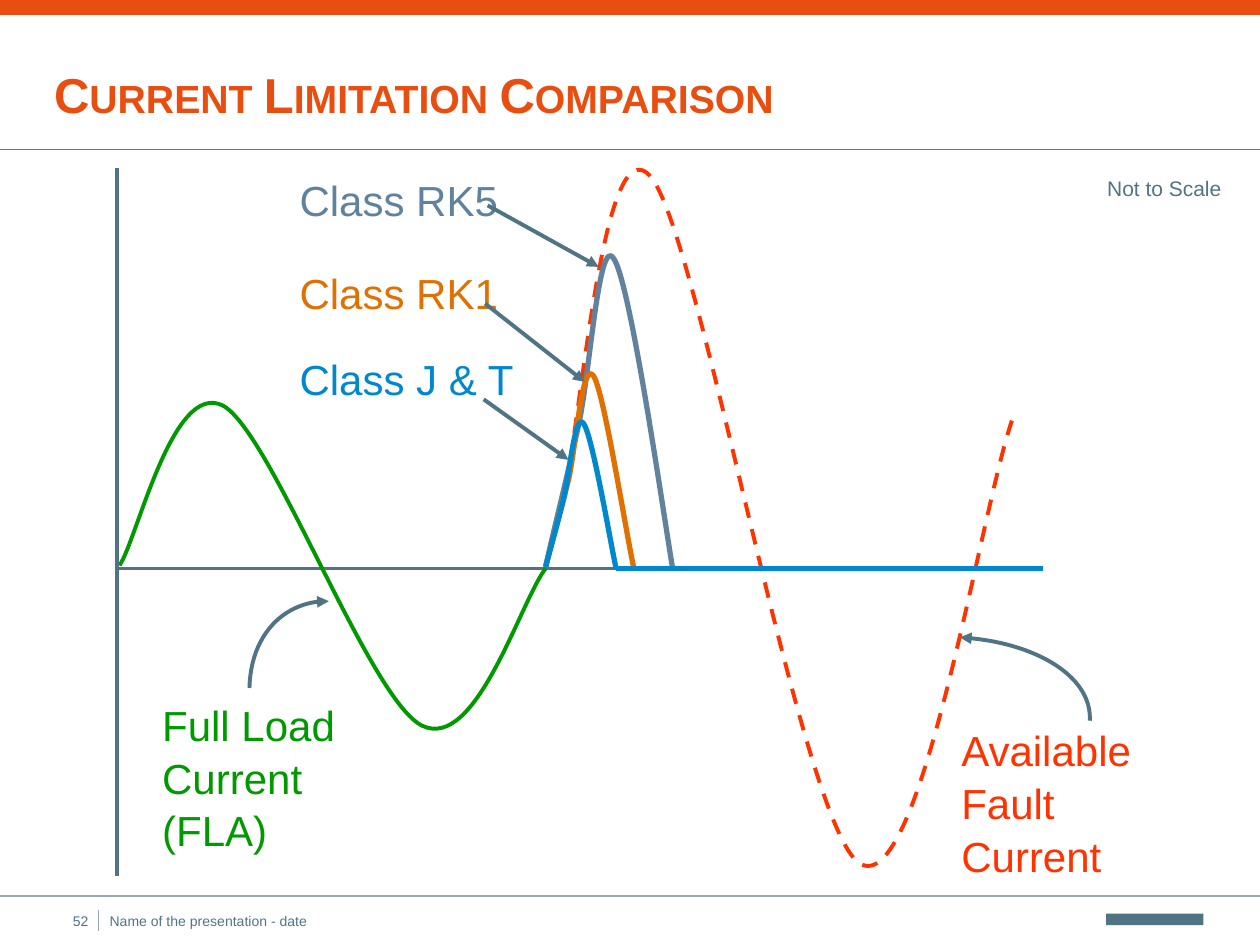
"""Build a slide comparing the current limitation of fuse classes."""
from dataclasses import dataclass
from typing import Optional

import lxml.etree
import pptx
import pptx.dml.color
import pptx.dml.line
import pptx.enum.dml
import pptx.enum.shapes
import pptx.enum.text
import pptx.oxml.ns
import pptx.shapes.connector
import pptx.shapes.freeform
import pptx.text.text
import pptx.util

Cm = pptx.util.Cm
Pt = pptx.util.Pt
qn = pptx.oxml.ns.qn
Point = tuple[float, float]

ORANGE, SLATE, PALE = "E84E0F", "517485", "96A9B1"
GREEN, RED = "009900", "FF3300"
STEEL, AMBER, BLUE = "61829C", "E17000", "0088CE"
AXIS_Y = 11.46


@dataclass(frozen=True)
class Stroke:
    color: str
    width: float = 2.25
    dashed: bool = False
    arrow: Optional[str] = None


@dataclass(frozen=True)
class Curve:
    points: tuple[Point, ...]
    stroke: Stroke


@dataclass(frozen=True)
class FuseClass:
    points: tuple[Point, ...]
    color: str
    axis_end: float


@dataclass(frozen=True)
class Label:
    text: str
    left: float
    top: float
    width: float
    height: float
    color: str
    size: float = 24


POINTER = Stroke(SLATE, arrow="tailEnd")
RULE = Stroke(PALE, 0.75)

FULL_LOAD = Curve(
    ((2.41, 11.4), (2.77, 10.87), (3.48, 7.65), (4.5, 8.18), (5.49, 8.74),
     (7.44, 14.1), (8.51, 14.63), (9.6, 15.16), (10.49, 12.12), (11, AXIS_Y)),
    Stroke(GREEN))
FAULT = Curve(
    ((11, 11.43), (11.05, 11.2), (11, 11.33), (11.35, 10.03), (11.71, 8.71),
     (12.14, 2.34), (13.13, 3.58), (14.12, 4.8), (16.13, 16.59), (17.32, 17.4),
     (18.54, 18.21), (19.76, 10.34), (20.4, 8.48)),
    Stroke(RED, dashed=True))
FULL_LOAD_POINTER = Curve(
    ((6.63, 12.12), (5.74, 12.09), (5.05, 12.88), (5.03, 13.87)),
    Stroke(SLATE, arrow="headEnd"))
FAULT_POINTER = Curve(
    ((21.97, 14.53), (22.02, 13.67), (20.85, 12.93), (19.35, 12.85)), POINTER)

FUSE_CLASSES = (
    FuseClass(((11, 11.43), (11.1, 10.95), (11.43, 9.63), (11.66, 8.59),
               (11.89, 7.57), (12.07, 4.72), (12.37, 5.21), (12.7, 5.66),
               (13.34, 10.13), (13.56, AXIS_Y)), STEEL, 20.98),
    FuseClass(((11, 11.43), (11.07, 11.15), (11.3, 10.31), (11.46, 9.68),
               (11.61, 9.04), (11.73, 7.26), (11.96, 7.57), (12.17, 7.85),
               (12.6, 10.64), (12.78, AXIS_Y)), AMBER, 21.01),
    FuseClass(((11, 11.43), (11.05, 11.23), (11.23, 10.59), (11.35, 10.11),
               (11.48, 9.63), (11.58, 8.31), (11.76, 8.53), (11.94, 8.76),
               (12.29, 10.85), (12.42, AXIS_Y)), BLUE, 21.03),
)

LABELS = (
    Label("Full Load Current (FLA)", 3.02, 13.92, 4.9, 1.78, GREEN),
    Label("Available Fault Current", 19.13, 14.43, 5.26, 1.78, RED),
    Label("Class J & T", 5.79, 6.96, 4.9, 1.02, BLUE),
    Label("Not to Scale", 22.07, 3.38, 2.84, 0.76, SLATE, 12),
    Label("Class RK1", 5.79, 5.21, 4.9, 1.02, AMBER),
    Label("Class RK5", 5.79, 3.35, 4.9, 1.02, STEEL),
)

CLASS_POINTERS = (
    ((9.75, 8.05), (11.46, 9.27)),
    ((9.78, 6.12), (11.79, 7.7)),
    ((9.83, 4.14), (12.07, 5.38)),
)


def rgb(color: str) -> pptx.dml.color.RGBColor:
    return pptx.dml.color.RGBColor.from_string(color)


def apply_stroke(line: pptx.dml.line.LineFormat, stroke: Stroke) -> None:
    line.color.rgb = rgb(stroke.color)
    line.width = Pt(stroke.width)
    if stroke.dashed:
        line.dash_style = pptx.enum.dml.MSO_LINE.DASH
    if stroke.arrow:
        ln = line._get_or_add_ln()
        lxml.etree.SubElement(ln, qn(f"a:{stroke.arrow}"), type="triangle")


def draw_line(shapes, start: Point, end: Point,
              stroke: Stroke) -> pptx.shapes.connector.Connector:
    line = shapes.add_connector(pptx.enum.shapes.MSO_CONNECTOR.STRAIGHT,
                                *map(Cm, start + end))
    apply_stroke(line.line, stroke)
    lxml.etree.SubElement(line._element.spPr, qn("a:effectLst"))
    return line


def draw_curve(shapes, curve: Curve) -> None:
    """Draw a start point followed by triples of cubic Bézier points."""
    start, *rest = [(Cm(x), Cm(y)) for x, y in curve.points]
    builder = shapes.build_freeform(*start)
    builder.add_line_segments(rest, close=False)
    outline = builder.convert_to_shape()
    path = outline._element.find(".//" + qn("a:path"))
    segments = path.findall(qn("a:lnTo"))
    for first in range(0, len(segments), 3):
        bezier = lxml.etree.SubElement(path, qn("a:cubicBezTo"))
        for segment in segments[first:first + 3]:
            bezier.append(segment[0])
            path.remove(segment)
    outline.fill.background()
    outline.shadow.inherit = False
    apply_stroke(outline.line, curve.stroke)


def draw_fuse_class(shapes, fuse: FuseClass) -> None:
    trace = shapes.add_group_shape().shapes
    stroke = Stroke(fuse.color, 3)
    draw_curve(trace, Curve(fuse.points, stroke))
    draw_line(trace, fuse.points[-1], (fuse.axis_end, AXIS_Y), stroke)


def draw_label(shapes, label: Label) -> pptx.text.text.TextFrame:
    frame = shapes.add_textbox(*map(Cm, (label.left, label.top, label.width,
                                         label.height))).text_frame
    frame.word_wrap = True
    paragraph = frame.paragraphs[0]
    paragraph.text = label.text
    paragraph.font.name = "Arial"
    paragraph.font.size = Pt(label.size)
    paragraph.font.color.rgb = rgb(label.color)
    return frame


def draw_block(shapes, left: float, top: float, width: float, height: float,
               color: str) -> None:
    block = shapes.add_shape(pptx.enum.shapes.MSO_SHAPE.RECTANGLE,
                             *map(Cm, (left, top, width, height)))
    block.shadow.inherit = False
    block.fill.solid()
    block.fill.fore_color.rgb = rgb(color)
    block.line.fill.background()


def draw_frame(shapes) -> None:
    footer = draw_label(shapes, Label("Name of the presentation - date",
                                      2.21, 18.39, 4.04, 0.33, SLATE, 8))
    number = draw_label(shapes, Label("52", 1.27, 18.39, 0.71, 0.33, SLATE, 8))
    for frame in (footer, number):
        frame.margin_left = frame.margin_right = 0
        frame.margin_top = frame.margin_bottom = 0
    footer.word_wrap = False
    number.paragraphs[0].alignment = pptx.enum.text.PP_ALIGN.CENTER
    draw_line(shapes, (1.98, 18.34), (1.98, 18.77), RULE)
    draw_line(shapes, (0, 18.06), (25.4, 18.06), RULE)
    draw_block(shapes, 22.3, 18.42, 1.96, 0.23, SLATE)
    draw_line(shapes, (0, 3.02), (25.4, 3.02), Stroke(ORANGE, 0.75))
    draw_block(shapes, 0, 0, 25.4, 0.3, ORANGE)


def draw_title(shapes) -> None:
    title = draw_label(shapes, Label("Current Limitation Comparison",
                                     0.84, 1.09, 23.29, 1.85, ORANGE, 28))
    title.vertical_anchor = pptx.enum.text.MSO_ANCHOR.MIDDLE
    title.margin_bottom = Cm(0.36)
    heading = title.paragraphs[0]
    heading.font.bold = True
    heading._p.pPr.find(qn("a:defRPr")).set("cap", "small")


def main() -> None:
    deck = pptx.Presentation()
    deck.slide_width, deck.slide_height = Cm(25.4), Cm(19.05)
    shapes = deck.slides.add_slide(deck.slide_layouts[6]).shapes
    draw_frame(shapes)
    draw_line(shapes, (20.93, AXIS_Y), (2.39, AXIS_Y), Stroke(SLATE))
    draw_curve(shapes, FULL_LOAD)
    draw_curve(shapes, FAULT)
    draw_line(shapes, (2.36, 3.38), (2.36, 17.65), Stroke(SLATE))
    for fuse in FUSE_CLASSES:
        draw_fuse_class(shapes, fuse)
    draw_curve(shapes, FULL_LOAD_POINTER)
    draw_curve(shapes, FAULT_POINTER)
    for label in LABELS:
        draw_label(shapes, label).paragraphs[0].line_spacing = 1.05
    for start, end in CLASS_POINTERS:
        draw_line(shapes, start, end, POINTER)
    draw_title(shapes)
    deck.save("out.pptx")


if __name__ == "__main__":
    main()
